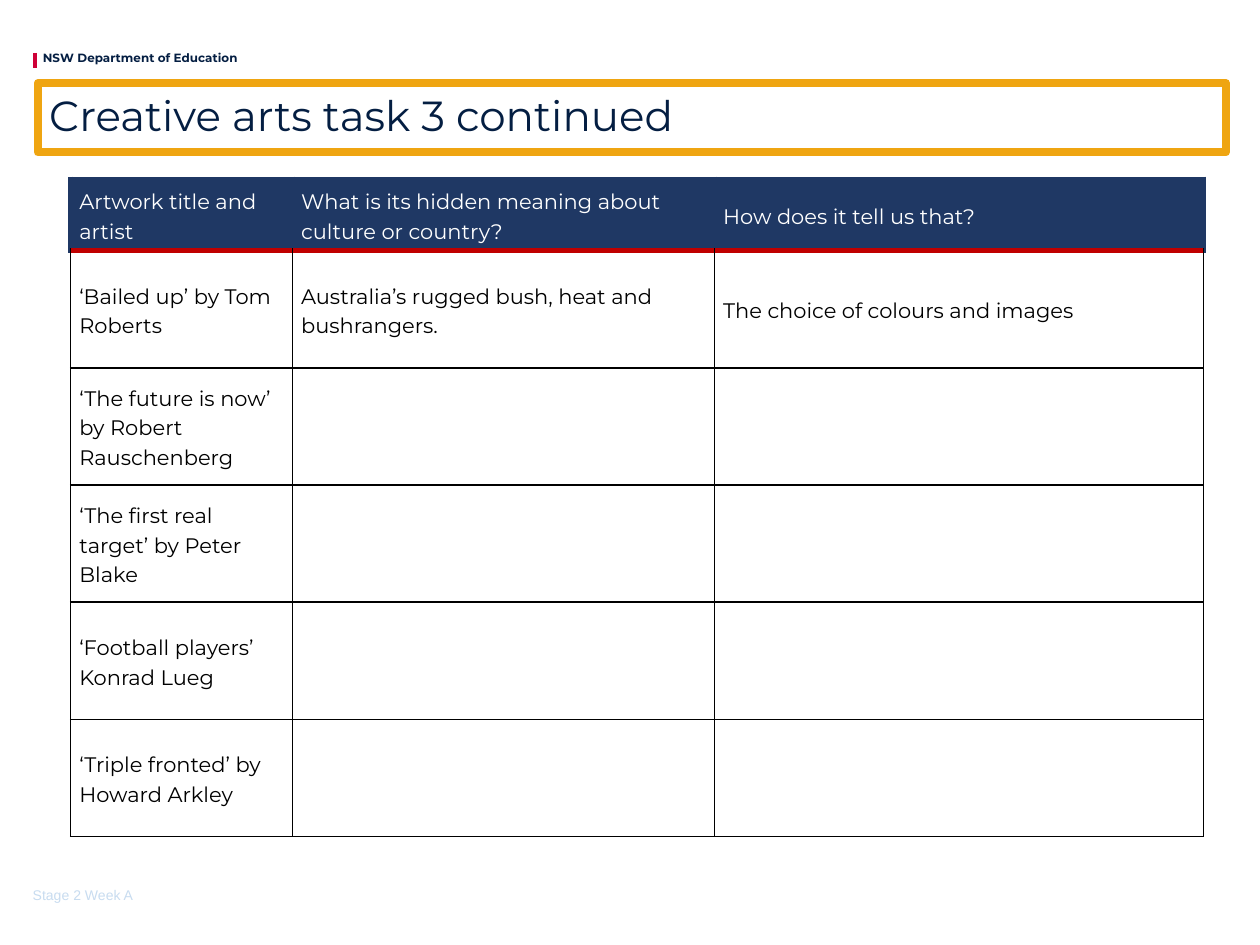
import pptx
import pptx.dml.color
import pptx.enum.shapes
import pptx.enum.text
import pptx.oxml
import pptx.oxml.ns
import pptx.util
from lxml import etree

Inches = pptx.util.Inches
Pt = pptx.util.Pt
MSO_ANCHOR = pptx.enum.text.MSO_ANCHOR

NAVY, HEADER, RED = "041E42", "1F3864", "C00000"
BLACK, WHITE = "000000", "FFFFFF"

HEADINGS = [
    "Artwork title and artist",
    "What is its hidden meaning about culture or country?",
    "How does it tell us that?",
]
ARTWORKS = [
    ["‘Bailed up’ by Tom Roberts",
     "Australia’s rugged bush, heat and bushrangers.",
     "The choice of colours and images"],
    ["‘The future is now’ by Robert Rauschenberg", "", ""],
    ["‘The first real target’ by Peter Blake", "", ""],
    ["‘Football players’ Konrad Lueg", "", ""],
    ["‘Triple fronted’ by Howard Arkley", "", ""],
]


def rgb(color):
    return pptx.dml.color.RGBColor.from_string(color)


def set_border(cell, side, color, width):
    """Draw one side (L, R, T or B) of a cell; call in that order, before the fill."""
    ln = pptx.oxml.parse_xml(
        f'<a:ln{side} {pptx.oxml.ns.nsdecls("a")} w="{Pt(width)}">'
        f'<a:solidFill><a:srgbClr val="{color}"/></a:solidFill></a:ln{side}>')
    cell._tc.get_or_add_tcPr().append(ln)


class SlideBuilder:
    font = "Montserrat"

    def __init__(self, prs):
        self.slide = prs.slides.add_slide(prs.slide_layouts[5])

    def set_text(self, tf, text, size, color, bold=False, font=None, spacing=None):
        tf.text = text
        p = tf.paragraphs[0]
        p.alignment = pptx.enum.text.PP_ALIGN.LEFT
        p.line_spacing = spacing
        for r in p.runs:
            r.font.name = font or self.font
            r.font.size = Pt(size)
            r.font.bold = bold
            r.font.color.rgb = rgb(color)

    def frame(self, tf, anchor, left=0):
        tf.margin_left = Inches(left)
        tf.margin_right = tf.margin_top = tf.margin_bottom = 0
        tf.vertical_anchor = anchor
        tf.word_wrap = True
        tf.auto_size = pptx.enum.text.MSO_AUTO_SIZE.NONE

    def title(self, text, x, y, w, h):
        s = self.slide.shapes.title
        s.left, s.top, s.width, s.height = map(Inches, (x, y, w, h))
        s.line.color.rgb = rgb("EFA511")
        s.line.width = Pt(4.5)
        self.frame(s.text_frame, MSO_ANCHOR.MIDDLE, left=0.09)
        self.set_text(s.text_frame, text, 24, NAVY, spacing=0.9)

    def text(self, text, x, y, w, h, size, color, anchor=MSO_ANCHOR.TOP, **style):
        s = self.slide.shapes.add_textbox(*map(Inches, (x, y, w, h)))
        self.frame(s.text_frame, anchor)
        self.set_text(s.text_frame, text, size, color, **style)

    def line(self, x1, y1, x2, y2, color, width):
        s = self.slide.shapes.add_connector(
            pptx.enum.shapes.MSO_CONNECTOR.STRAIGHT,
            *map(Inches, (x1, y1, x2, y2)))
        s.line.color.rgb = rgb(color)
        s.line.width = Pt(width)
        etree.SubElement(s._element.spPr, pptx.oxml.ns.qn("a:effectLst"))

    def table(self, rows, x, y, widths, heights):
        table = self.slide.shapes.add_table(
            len(rows), len(widths), Inches(x), Inches(y),
            Inches(sum(widths)), Inches(sum(heights))).table
        for column, width in zip(table.columns, widths):
            column.width = Inches(width)
        for row, height in zip(table.rows, heights):
            row.height = Inches(height)
        for i, texts in enumerate(rows):
            for j, text in enumerate(texts):
                self.cell(table.cell(i, j), text, i)

    def cell(self, cell, text, row):
        cell.margin_left = cell.margin_right = Inches(0.07)
        cell.margin_top = cell.margin_bottom = 0
        cell.vertical_anchor = MSO_ANCHOR.MIDDLE
        is_header = row == 0
        side = (HEADER, 3) if is_header else (BLACK, 1)
        rule = (RED, 3)
        borders = {
            "L": side,
            "R": side,
            "T": rule if row == 1 else side,
            "B": rule if is_header else side,
        }
        for name, (color, width) in borders.items():
            set_border(cell, name, color, width)
        if is_header:
            cell.fill.solid()
            cell.fill.fore_color.rgb = rgb(HEADER)
        else:
            cell.fill.background()
        self.set_text(cell.text_frame, text, 12, WHITE if is_header else BLACK,
                      spacing=1.15)


def main():
    prs = pptx.Presentation()
    prs.slide_width, prs.slide_height = Inches(10), Inches(7.5)
    page = SlideBuilder(prs)
    page.line(0.28, 0.42, 0.28, 0.54, "CE0037", 2.5)
    page.text("NSW Department of Education", 0.34, 0.4, 2.03, 0.11, 6.8, NAVY,
              bold=True)
    page.title("Creative arts task 3 continued", 0.3, 0.66, 9.43, 0.55)
    page.table([HEADINGS] + ARTWORKS, 0.56, 1.42, [1.76, 3.35, 3.88],
               [0.57] + [0.93] * len(ARTWORKS))
    page.text("Stage 2 Week A", 0.26, 6.77, 0.86, 0.4, 8, "C8DCF0",
              anchor=MSO_ANCHOR.BOTTOM, font="Arial")
    prs.save("out.pptx")


if __name__ == "__main__":
    main()
